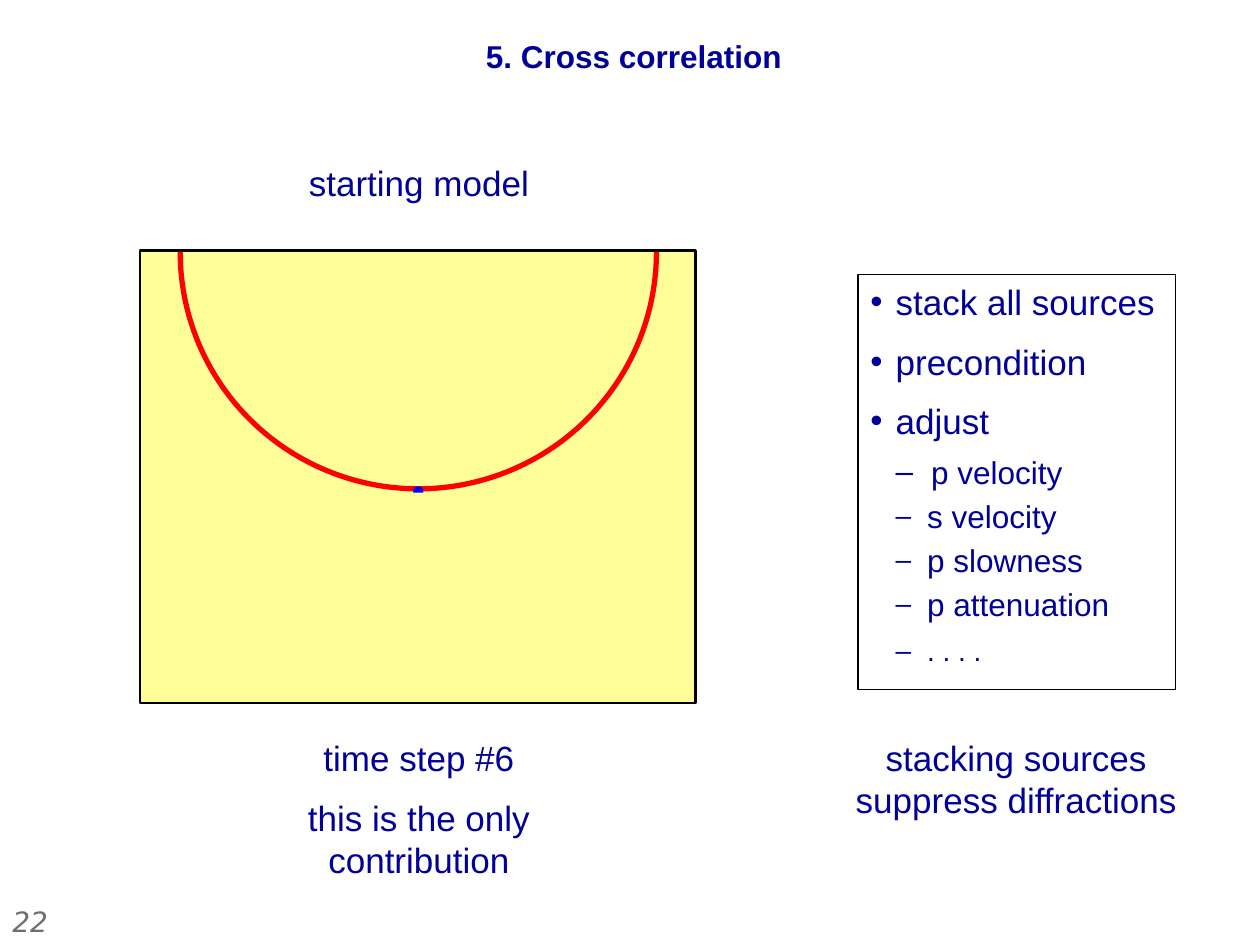
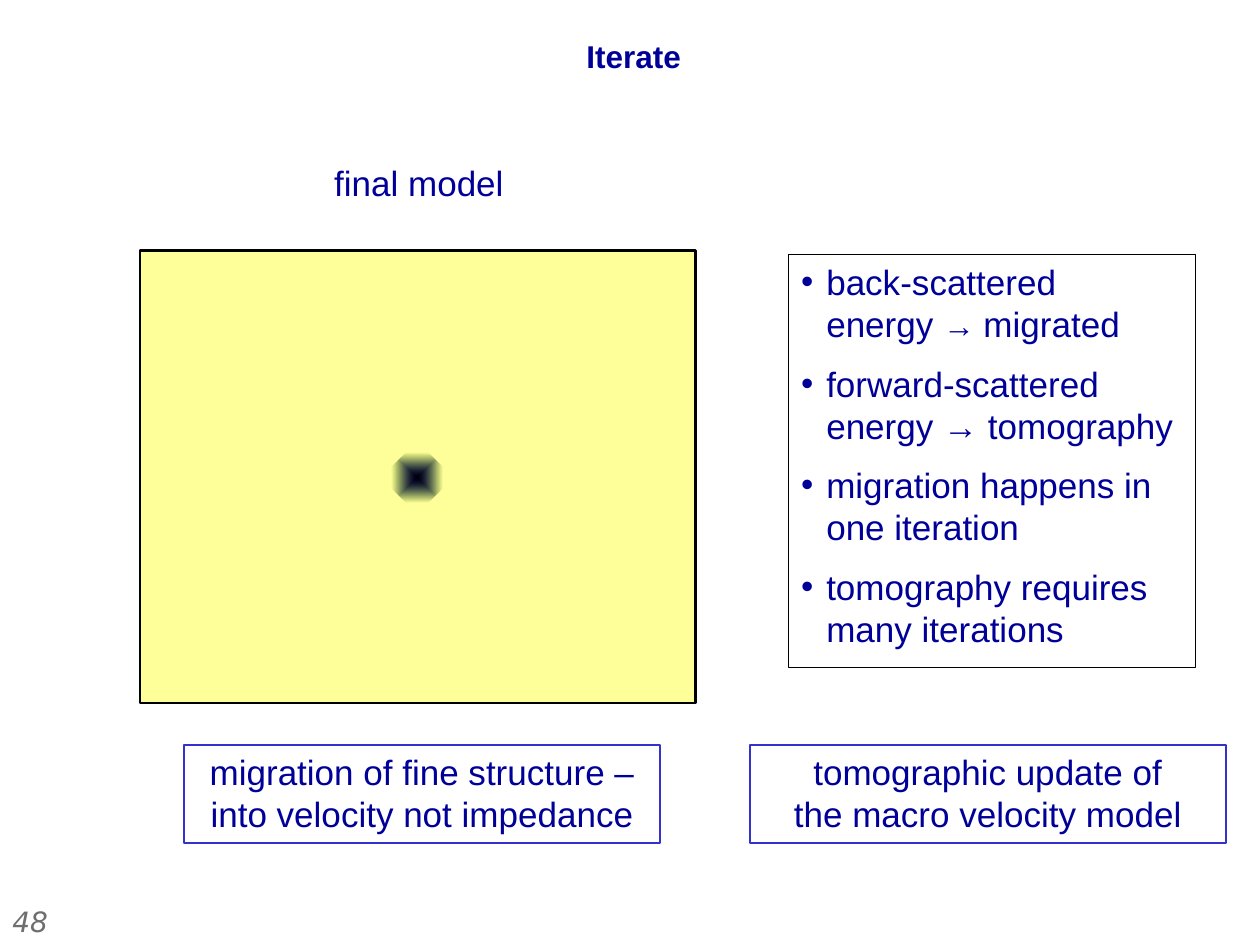
from dataclasses import dataclass
from typing import NamedTuple

from lxml.etree import SubElement
from pptx import Presentation
from pptx.dml.color import RGBColor
from pptx.enum.shapes import MSO_SHAPE
from pptx.enum.text import MSO_ANCHOR, MSO_AUTO_SIZE, PP_ALIGN
from pptx.oxml import parse_xml
from pptx.oxml.ns import nsdecls, qn
from pptx.util import Inches, Pt

NAVY = RGBColor(0x00, 0x00, 0x99)
BOX_BLUE = RGBColor(0x33, 0x33, 0xCC)
DOT_BLUE = RGBColor(0x00, 0x00, 0xFF)
RED = RGBColor(0xFF, 0x00, 0x00)
BLACK = RGBColor(0x00, 0x00, 0x00)
GREY = RGBColor(0x6E, 0x6E, 0x6F)
YELLOW = RGBColor(0xFF, 0xFF, 0x99)
LIME = RGBColor(0x99, 0xFF, 0x33)

COLUMNS, ROWS = 100, 75
CELL = Inches(10) // COLUMNS
BODY_SIZE = 20
LINE_HEIGHT = 1.2
BULLET_INDENT = 0.2


class Area(NamedTuple):
    """Left, top, width and height in grid columns and rows."""
    left: float
    top: float
    width: float
    height: float

    def emu(self) -> list[int]:
        return [round(value * CELL) for value in self]


class Run(NamedTuple):
    text: str
    size: float = BODY_SIZE


@dataclass(frozen=True)
class Para:
    runs: tuple[Run, ...]
    bullet: str = ""
    bullet_size: float = BODY_SIZE
    margin: float = 0
    hang: float = 0
    before: float = 10
    line: float = BODY_SIZE * LINE_HEIGHT
    align: PP_ALIGN = PP_ALIGN.LEFT


@dataclass(frozen=True)
class TextBlock:
    area: Area
    paras: tuple[Para, ...]
    outline: RGBColor | None = None
    weight: float = 0.75


MODEL = Area(11.1, 19.9, 44.1, 35.9)
TITLE = Area(7.8, 2.8, 85, 6.3)
NUMBER = Area(0, 71.3, 7.9, 3.7)
HEADING = Area(21.7, 12.3, 23.1, 4.3)


def centred(text: str) -> Para:
    return Para((Run(text),), align=PP_ALIGN.CENTER)


def bullet(*runs: Run) -> Para:
    return Para(runs, "•", margin=BULLET_INDENT, hang=BULLET_INDENT)


def dash(text: str, size: float = 18, dash_size: float = 16, line: float = 18) -> Para:
    """Second-level item; the dash and its gap scale with the dash size."""
    hang = dash_size / 64
    return Para((Run(text, size),), "–", dash_size, BULLET_INDENT + hang, hang,
                line * 0.2, line * LINE_HEIGHT)


def add_bullet(p, para: Para) -> None:
    pPr = p._p.get_or_add_pPr()
    pPr.set("marL", str(Inches(para.margin)))
    pPr.set("indent", str(-Inches(para.hang)))
    percent = round(100 * para.bullet_size / para.runs[0].size)
    SubElement(pPr, qn("a:buSzPct")).set("val", str(percent * 1000))
    SubElement(pPr, qn("a:buFont")).set("typeface", "Arial")
    SubElement(pPr, qn("a:buChar")).set("char", para.bullet)


def add_run(p, text: str, size: float, colour: RGBColor = NAVY, font: str = "Arial",
            bold: bool = False, italic: bool = False) -> None:
    r = p.add_run()
    r.text = text
    r.font.name, r.font.size = font, Pt(size)
    r.font.bold, r.font.italic = bold, italic
    r.font.color.rgb = colour


def add_text(s, block: TextBlock) -> None:
    sp = s.shapes.add_textbox(*block.area.emu())
    if block.outline is not None:
        sp.line.color.rgb, sp.line.width = block.outline, Pt(block.weight)
    tf = sp.text_frame
    tf.word_wrap = True
    for i, para in enumerate(block.paras):
        p = tf.add_paragraph() if i else tf.paragraphs[0]
        p.alignment = para.align
        p.line_spacing = Pt(para.line)
        p.space_before = Pt(para.before if i else 0)
        if para.bullet:
            add_bullet(p, para)
        for run in para.runs:
            for j, part in enumerate(run.text.split("\n")):
                if j:
                    p.add_line_break()
                add_run(p, part, run.size)


def add_shape(s, kind: MSO_SHAPE, area: Area, fill: RGBColor | None = None,
              line: RGBColor | None = None, weight: float = 1.5):
    sp = s.shapes.add_shape(kind, *area.emu())
    sp.shadow.inherit = False
    if fill is None:
        sp.fill.background()
    else:
        sp.fill.solid()
        sp.fill.fore_color.rgb = fill
    if line is None:
        sp.line.fill.background()
    else:
        sp.line.color.rgb, sp.line.width = line, Pt(weight)
    return sp


def add_glow(s, area: Area, inner: RGBColor, outer: RGBColor) -> None:
    """Octagon that fades from an opaque centre to a clear edge."""
    sp = add_shape(s, MSO_SHAPE.OCTAGON, area)
    sp.adjustments[0] = 0.29
    spPr = sp._element.spPr
    spPr.replace(spPr.find(qn("a:noFill")), parse_xml(
        f'<a:gradFill {nsdecls("a")} rotWithShape="1"><a:gsLst>'
        f'<a:gs pos="0"><a:srgbClr val="{inner}"/></a:gs>'
        f'<a:gs pos="100000"><a:srgbClr val="{outer}"><a:alpha val="0"/></a:srgbClr></a:gs>'
        '</a:gsLst><a:path path="shape">'
        '<a:fillToRect l="50000" t="50000" r="50000" b="50000"/></a:path></a:gradFill>'))


def add_page(prs, title: str, number: str, heading: str):
    """Slide with title, page number and the headed model panel."""
    s = prs.slides.add_slide(prs.slide_layouts[5])
    sp = s.shapes.title
    sp.left, sp.top, sp.width, sp.height = TITLE.emu()
    tf = sp.text_frame
    tf.auto_size = MSO_AUTO_SIZE.NONE
    tf.vertical_anchor = MSO_ANCHOR.TOP
    p = tf.paragraphs[0]
    p.alignment, p.line_spacing = PP_ALIGN.CENTER, 0.9
    add_run(p, title, 18, bold=True)

    p = s.shapes.add_textbox(*NUMBER.emu()).text_frame.paragraphs[0]
    add_run(p, number, 16, GREY, "DejaVu Sans", italic=True)

    add_shape(s, MSO_SHAPE.RECTANGLE, MODEL, YELLOW, BLACK)
    add_text(s, TextBlock(HEADING, (centred(heading),)))
    return s


def add_wavefront(s) -> None:
    """Lower half circle, with the single contributing point at its bottom."""
    arc = add_shape(s, MSO_SHAPE.ARC, Area(14.3, 1.2, 37.8, 37.6), line=RED, weight=3)
    arc.adjustments[0], arc.adjustments[1] = 0, 108
    add_shape(s, MSO_SHAPE.OVAL, Area(33, 38.8, 0.4, 0.4), YELLOW, DOT_BLUE, 3)
    add_shape(s, MSO_SHAPE.RECTANGLE, Area(31.9, 39.1, 2.4, 0.8), YELLOW)


CORRELATION_TEXT = (
    TextBlock(Area(68.1, 21.8, 25.2, 32.9), (
        *(bullet(Run(text)) for text in ("stack all sources", "precondition", "adjust")),
        dash("p velocity", dash_size=18, line=20),
        *(dash(text) for text in ("s velocity", "p slowness", "p attenuation")),
        dash(". . . .", size=16),
    ), BLACK),
    TextBlock(Area(21.7, 58, 23.1, 12.7),
              (centred("time step #6"), centred("this is the only contribution"))),
    TextBlock(Area(65.7, 58, 29.9, 7.7),
              (centred("stacking sources suppress diffractions"),)),
)

ITERATE_TEXT = (
    TextBlock(Area(62.6, 20.2, 32.3, 32.8), (
        bullet(Run("back-scattered\nenergy "), Run("→ ", 18), Run("migrated")),
        *(bullet(Run(text)) for text in (
            "forward-scattered energy → tomography",
            "migration happens in one iteration",
            "tomography requires many iterations")),
    ), BLACK),
    *(TextBlock(Area(left, 59.1, 37.8, 7.8), (centred(text),), BOX_BLUE, 1)
      for left, text in (
          (59.5, "tomographic update of\nthe macro velocity model"),
          (14.6, "migration of fine structure – into velocity not impedance"))),
)


def main() -> None:
    prs = Presentation()
    prs.slide_width, prs.slide_height = COLUMNS * CELL, ROWS * CELL

    s = add_page(prs, "5. Cross correlation", "22", "starting model")
    add_wavefront(s)
    for block in CORRELATION_TEXT:
        add_text(s, block)

    s = add_page(prs, "Iterate", "48", "final model")
    for inner, outer in ((DOT_BLUE, LIME), (BLACK, BLACK)):
        add_glow(s, Area(31.1, 35.9, 4, 4), inner, outer)
    for block in ITERATE_TEXT:
        add_text(s, block)

    prs.save("out.pptx")


if __name__ == "__main__":
    main()
